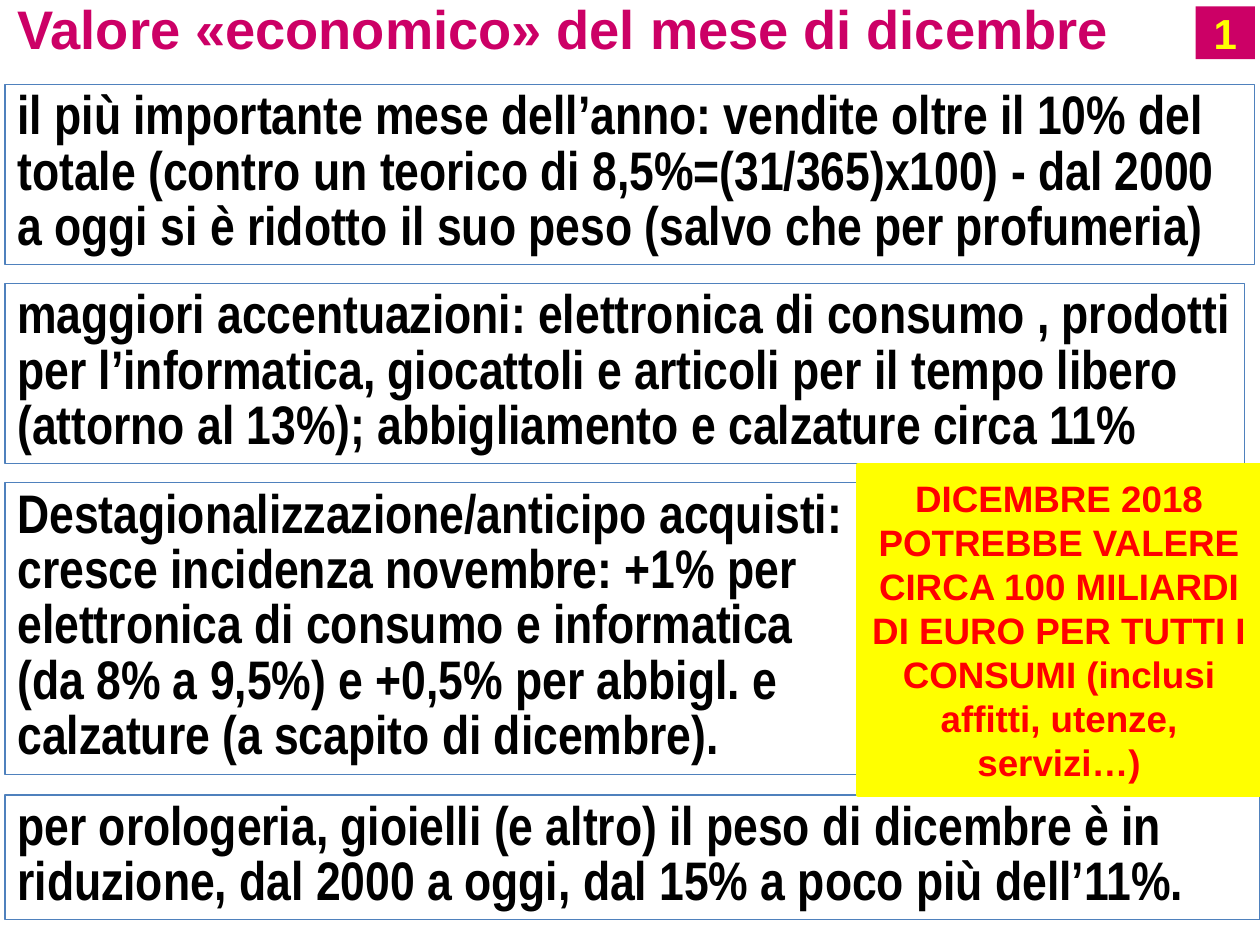
from pptx import Presentation
from pptx.dml.color import RGBColor
from pptx.enum.shapes import MSO_SHAPE
from pptx.enum.text import MSO_ANCHOR, MSO_AUTO_SIZE, PP_ALIGN
from pptx.util import Pt

TITLE = "Valore «economico» del mese di dicembre"
NUMBER = "1"
LEFT = 2.9
STATEMENTS = [
    ("il più importante mese dell’anno: vendite oltre il 10% del totale "
     "(contro un teorico di 8,5%=(31/365)x100) - dal 2000 a oggi si è ridotto "
     "il suo peso (salvo che per profumeria)", 48.2, 714.2, 103),
    ("maggiori accentuazioni: elettronica di consumo , prodotti per l’informatica, "
     "giocattoli e articoli per il tempo libero (attorno al 13%); "
     "abbigliamento e calzature circa 11%", 162, 708.5, 103),
    ("Destagionalizzazione/anticipo acquisti: cresce incidenza novembre: +1% per "
     "elettronica di consumo e informatica (da 8% a 9,5%) e +0,5% per abbigl. e "
     "calzature (a scapito di dicembre).", 275.8, 493.2, 167),
    ("per orologeria, gioielli (e altro) il peso di dicembre è in riduzione, "
     "dal 2000 a oggi, dal 15% a poco più dell’11%.", 454.3, 717.1, 71.3),
]
FORECAST = ("DICEMBRE 2018 POTREBBE VALERE CIRCA 100 MILIARDI DI EURO PER TUTTI I "
            "CONSUMI (inclusi affitti, utenze, servizi…)")


def color(value):
    return RGBColor.from_string(value)


def write(box, text, size, ink, font="Arial", align=PP_ALIGN.LEFT,
          anchor=MSO_ANCHOR.TOP, spacing=1.0, wrap=True, fit=MSO_AUTO_SIZE.NONE):
    frame = box.text_frame
    frame.word_wrap = wrap
    frame.auto_size = fit
    frame.vertical_anchor = anchor
    para = frame.paragraphs[0]
    para.alignment = align
    para.line_spacing = spacing
    span = para.add_run()
    span.text = text
    span.font.name = font
    span.font.size = Pt(size)
    span.font.bold = True
    span.font.color.rgb = color(ink)


def add_box(page, left, top, width, height, fill=None, line=None, weight=0.75):
    box = page.shapes.add_shape(
        MSO_SHAPE.RECTANGLE, Pt(left), Pt(top), Pt(width), Pt(height))
    box.shadow.inherit = False
    if fill:
        box.fill.solid()
        box.fill.fore_color.rgb = color(fill)
    else:
        box.fill.background()
    if line:
        box.line.color.rgb = color(line)
        box.line.width = Pt(weight)
    else:
        box.line.fill.background()
    return box


def main():
    deck = Presentation()
    deck.slide_width, deck.slide_height = Pt(720), Pt(540)
    page = deck.slides.add_slide(deck.slide_layouts[5])

    title = page.shapes.title
    title.left, title.top = Pt(LEFT), Pt(-0.7)
    title.width, title.height = Pt(657.4), Pt(40.3)
    write(title, TITLE, 31, "CC0066", spacing=0.85, fit=MSO_AUTO_SIZE.SHAPE_TO_FIT_TEXT)

    badge = add_box(page, 683.3, 3.6, 33.8, 30.2, fill="CC0066")
    write(badge, NUMBER, 24, "FFFF00", align=PP_ALIGN.CENTER,
          anchor=MSO_ANCHOR.MIDDLE, wrap=False)

    for text, top, width, height in STATEMENTS:
        box = add_box(page, LEFT, top, width, height, line="4F81BD")
        write(box, text, 31, "000000", font="Arial Narrow", spacing=0.85,
              fit=MSO_AUTO_SIZE.SHAPE_TO_FIT_TEXT)

    forecast = add_box(page, 490.3, 265.7, 229.7, 188.6,
                       fill="FFFF00", line="FFFF00", weight=2)
    write(forecast, FORECAST, 21, "FF0000", align=PP_ALIGN.CENTER,
          anchor=MSO_ANCHOR.MIDDLE)
    deck.save("out.pptx")


if __name__ == "__main__":
    main()
